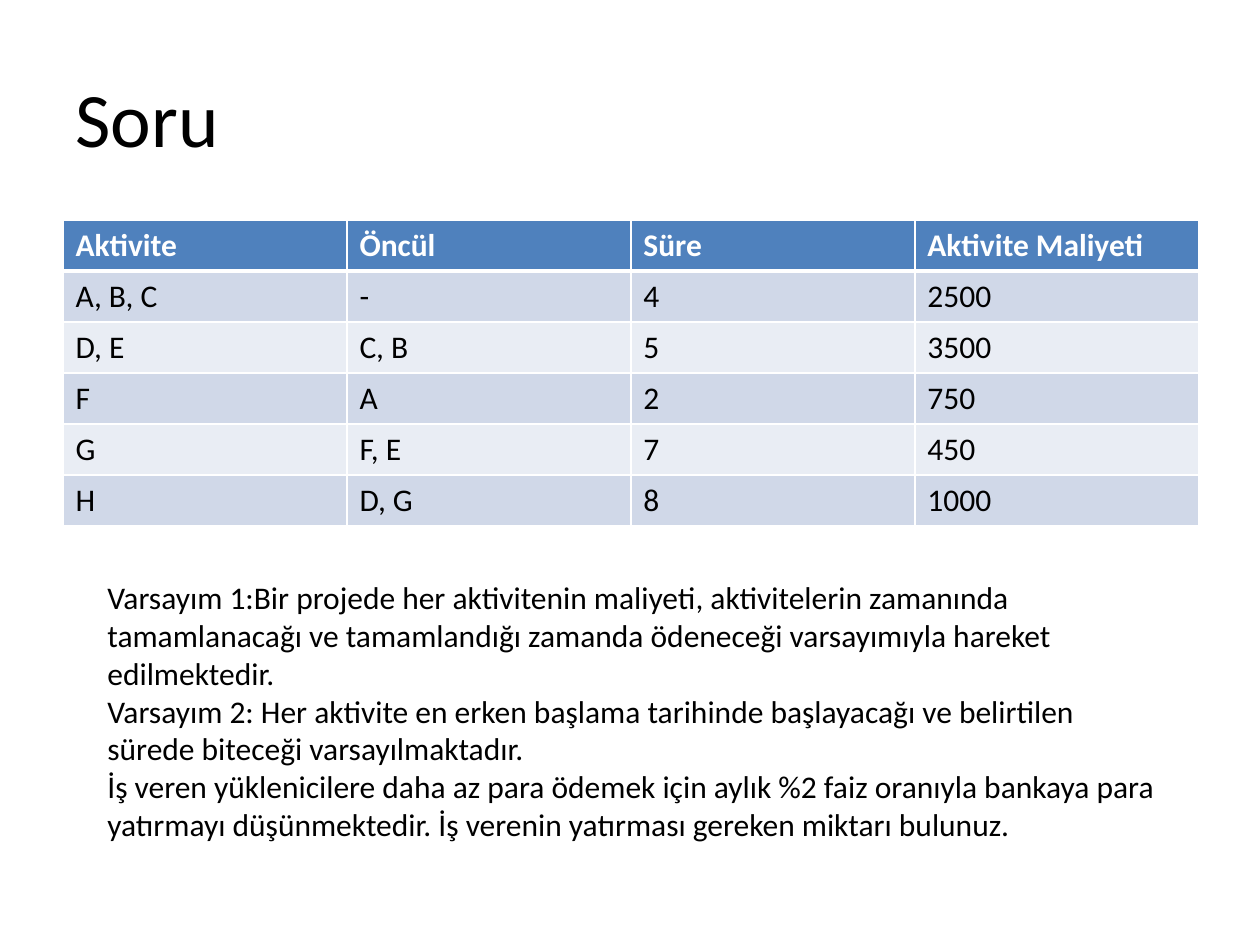
from pptx import Presentation
from pptx.dml.color import RGBColor
from pptx.enum.text import MSO_ANCHOR
from pptx.oxml import parse_xml
from pptx.oxml.ns import nsdecls
from pptx.util import Pt

EMU_PER_PX = 914400 // 126
FONT = "Calibri"
BLACK, WHITE = "000000", "FFFFFF"
HEADER_FILL = "4F81BD"
BAND_FILLS = ("D0D8E8", "E9EDF4")

ACTIVITIES = [
    ("Aktivite", "Öncül", "Süre", "Aktivite Maliyeti"),
    ("A, B, C", "-", "4", "2500"),
    ("D, E", "C, B", "5", "3500"),
    ("F", "A", "2", "750"),
    ("G", "F, E", "7", "450"),
    ("H", "D, G", "8", "1000"),
]
ASSUMPTIONS = [
    "Varsayım 1:Bir projede her aktivitenin maliyeti, aktivitelerin zamanında "
    "tamamlanacağı ve tamamlandığı zamanda ödeneceği varsayımıyla hareket edilmektedir.",
    "Varsayım 2: Her aktivite en erken başlama tarihinde başlayacağı ve belirtilen "
    "sürede biteceği varsayılmaktadır.",
    "İş veren yüklenicilere daha az para ödemek için aylık %2 faiz oranıyla bankaya para "
    "yatırmayı düşünmektedir. İş verenin yatırması gereken miktarı bulunuz.",
]


def px(length):
    return length * EMU_PER_PX


def color(value):
    return RGBColor.from_string(value)


def write_run(paragraph, wording, size, ink=BLACK, bold=False):
    run = paragraph.add_run()
    run.text = wording
    run.font.name = FONT
    run.font.size = Pt(size)
    run.font.bold = bold
    run.font.color.rgb = color(ink)


def add_text(slide, bounds, paragraphs, size, anchor=MSO_ANCHOR.TOP):
    frame = slide.shapes.add_textbox(*map(px, bounds)).text_frame
    frame.word_wrap = True
    frame.vertical_anchor = anchor
    for index, wording in enumerate(paragraphs):
        paragraph = frame.add_paragraph() if index else frame.paragraphs[0]
        write_run(paragraph, wording, size)


def set_borders(cell, widths):
    properties = cell._tc.get_or_add_tcPr()
    for side, width in zip("LRTB", widths):
        properties.append(parse_xml(
            f'<a:ln{side} {nsdecls("a")} w="{Pt(width)}"><a:solidFill>'
            f'<a:srgbClr val="{WHITE}"/></a:solidFill></a:ln{side}>'))


def add_activity_table(slide, left, top, column_width, row_height):
    row_count, column_count = len(ACTIVITIES), len(ACTIVITIES[0])
    table = slide.shapes.add_table(
        row_count, column_count, px(left), px(top),
        px(column_width * column_count), px(row_height * row_count)).table
    for column in table.columns:
        column.width = px(column_width)
    for row_index, activity in enumerate(ACTIVITIES):
        table.rows[row_index].height = px(row_height)
        is_header = row_index == 0
        fill = HEADER_FILL if is_header else BAND_FILLS[(row_index - 1) % 2]
        top_width = 3 if row_index == 1 else 1
        bottom_width = 3 if is_header else 1
        for column_index, wording in enumerate(activity):
            cell = table.cell(row_index, column_index)
            set_borders(cell, (1, 1, top_width, bottom_width))
            cell.fill.solid()
            cell.fill.fore_color.rgb = color(fill)
            write_run(cell.text_frame.paragraphs[0], wording, 18,
                      WHITE if is_header else BLACK, is_header)


def main():
    presentation = Presentation()
    presentation.slide_width = px(1260)
    presentation.slide_height = px(945)
    slide = presentation.slides.add_slide(presentation.slide_layouts[6])
    add_text(slide, (63, 38, 1134, 158), ["Soru"], 44, MSO_ANCHOR.MIDDLE)
    add_activity_table(slide, 63, 220, 284, 51)
    add_text(slide, (95, 572, 1081, 280), ASSUMPTIONS, 18)
    presentation.save("out.pptx")


if __name__ == "__main__":
    main()
